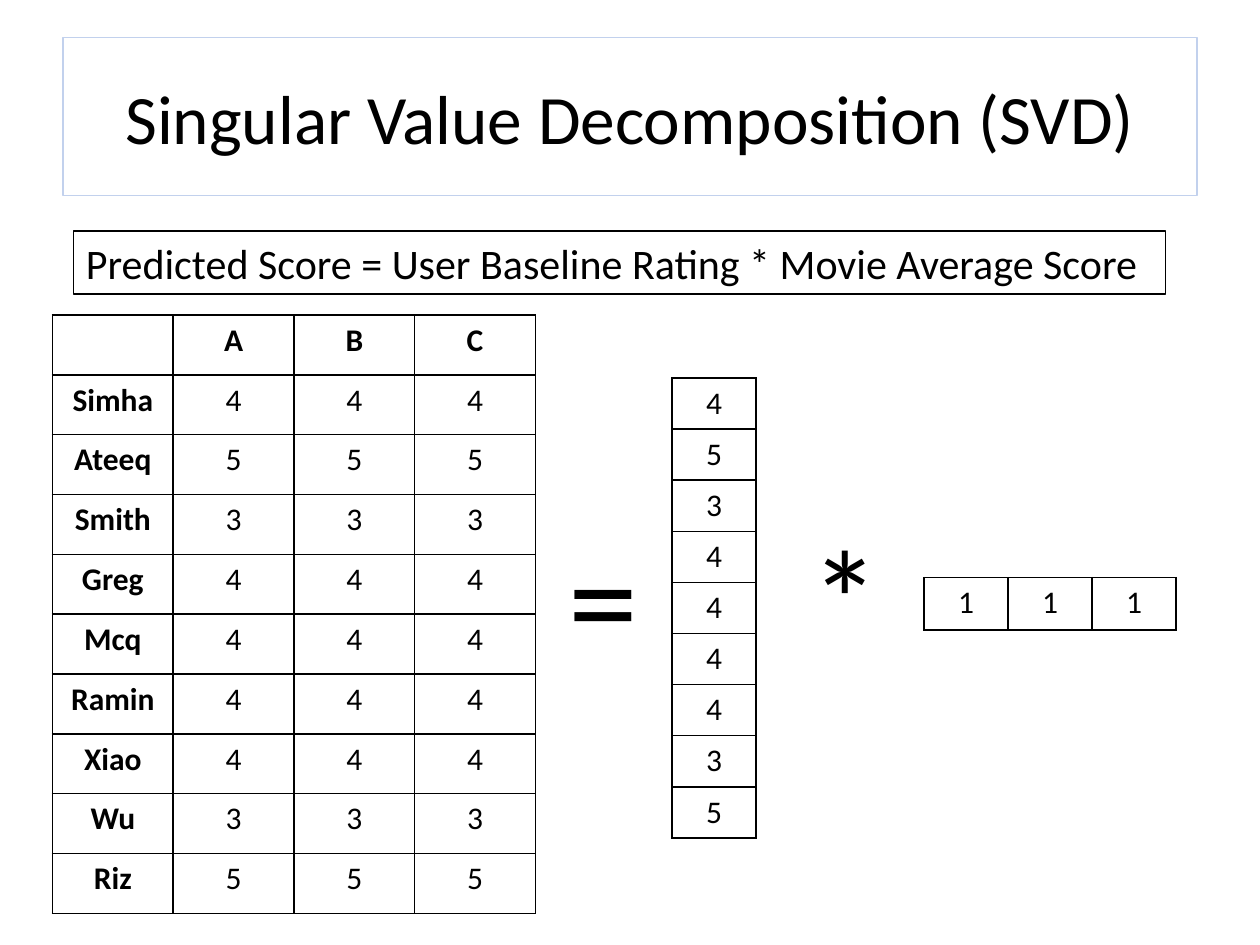
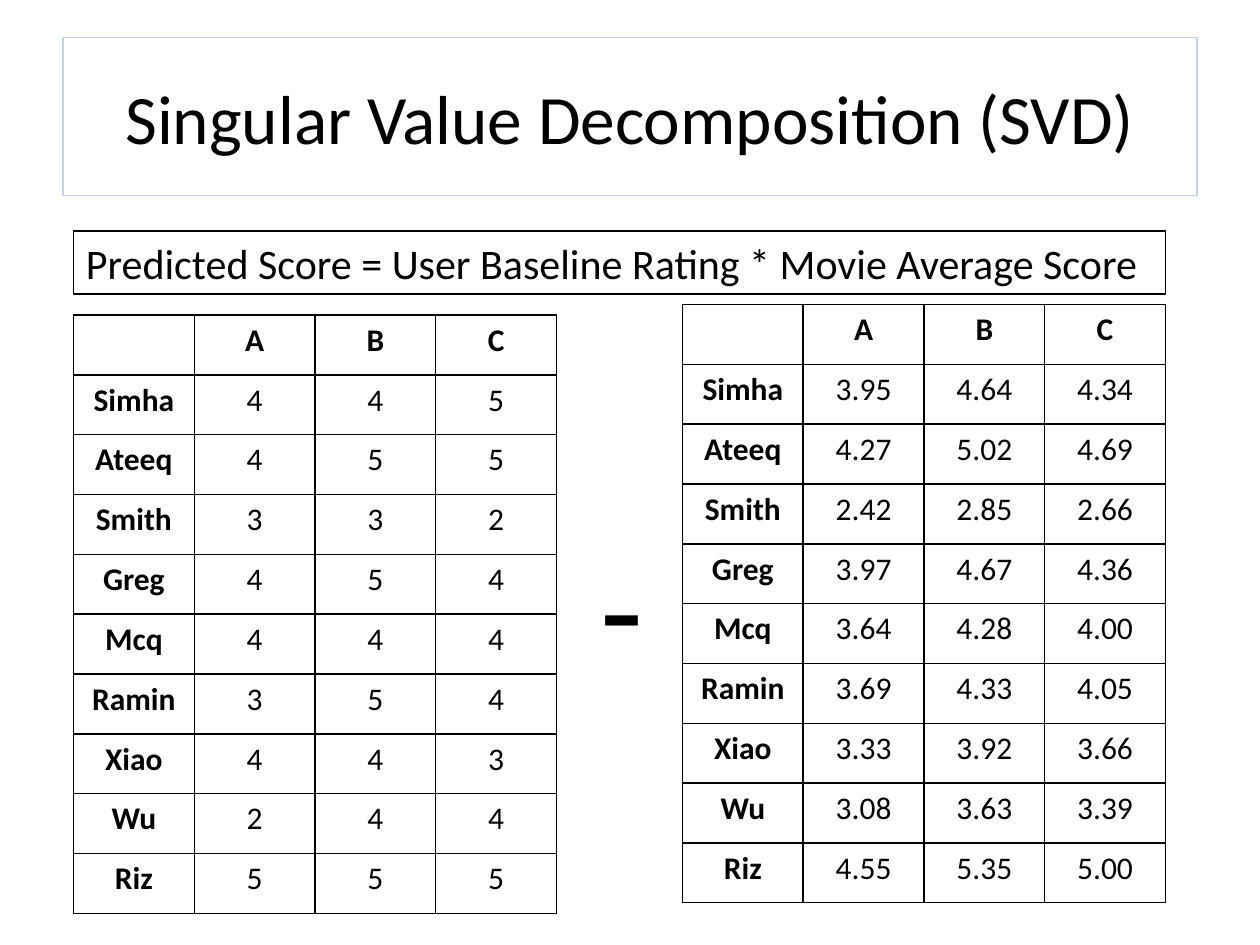
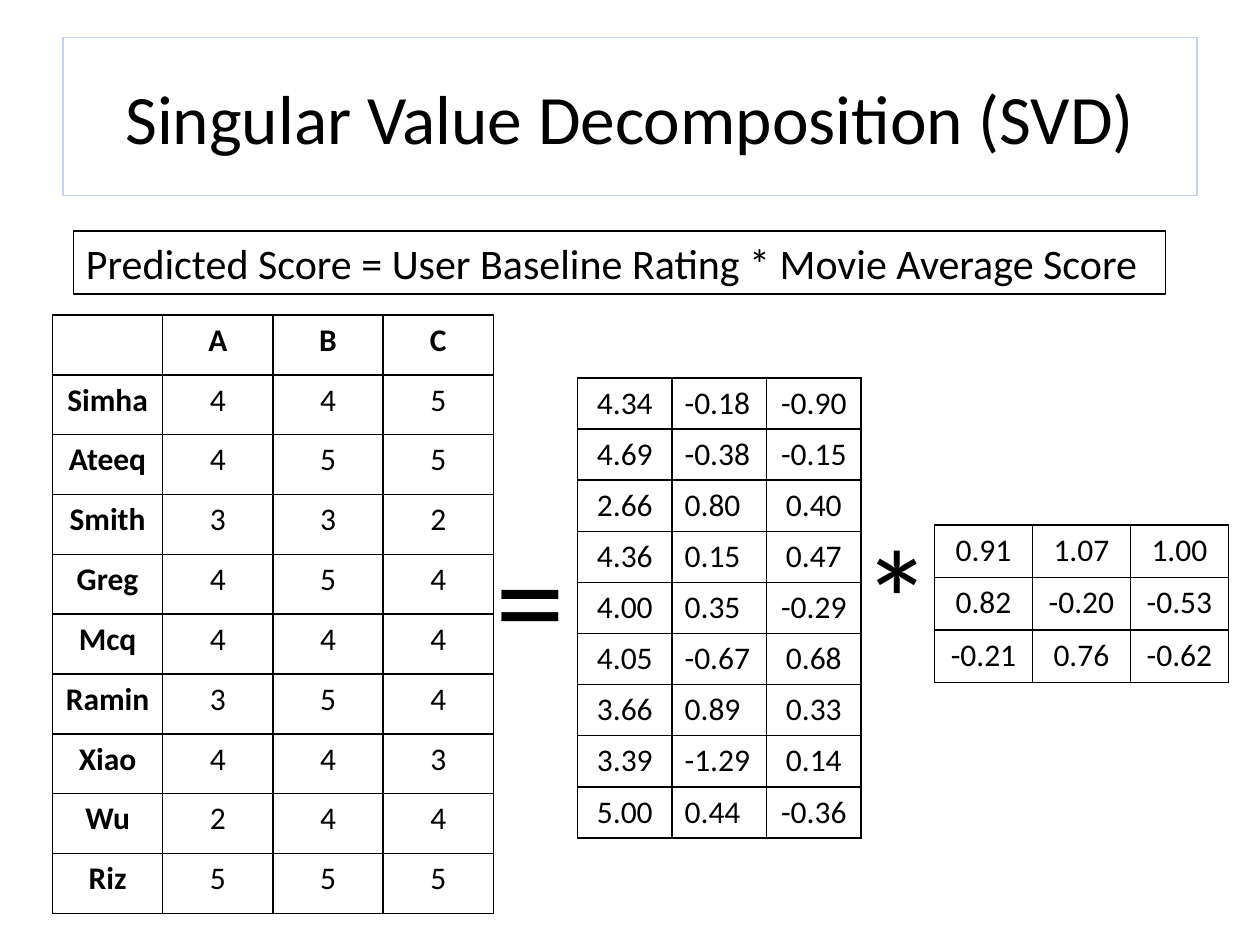
from lxml.etree import SubElement
from pptx import Presentation
from pptx.dml.color import RGBColor
from pptx.enum.shapes import MSO_SHAPE
from pptx.enum.text import MSO_ANCHOR as Anchor, MSO_AUTO_SIZE as AutoSize, PP_ALIGN as Align
from pptx.oxml.ns import qn
from pptx.util import Inches, Pt

BLACK = RGBColor(0x00, 0x00, 0x00)
PALE_BLUE = RGBColor(0xC2, 0xD1, 0xED)
FONT = "Calibri"
TITLE_SIZE, FORMULA_SIZE, TABLE_SIZE, OPERATOR_SIZE = 39.6, 24, 18, 80
TITLE_ONLY = 5
GRID_COLUMNS, GRID_ROWS = 120, 90

TITLE = "Singular Value Decomposition (SVD)"
FORMULA = "Predicted Score = User Baseline Rating * Movie Average Score"
MOVIES = ["A", "B", "C"]
USERS = "Simha Ateeq Smith Greg Mcq Ramin Xiao Wu Riz".split()

BASELINES = [[score] for score in "453444435"]
UNIT_AVERAGES = [["1", "1", "1"]]
UNIFORM_RATINGS = [baseline * len(MOVIES) for baseline in BASELINES]
RATINGS = [list(row) for row in "445 455 332 454 444 354 443 244 555".split()]
PREDICTIONS = [
    ["3.95", "4.64", "4.34"],
    ["4.27", "5.02", "4.69"],
    ["2.42", "2.85", "2.66"],
    ["3.97", "4.67", "4.36"],
    ["3.64", "4.28", "4.00"],
    ["3.69", "4.33", "4.05"],
    ["3.33", "3.92", "3.66"],
    ["3.08", "3.63", "3.39"],
    ["4.55", "5.35", "5.00"],
]
USER_FACTORS = [
    ["4.34", "-0.18", "-0.90"],
    ["4.69", "-0.38", "-0.15"],
    ["2.66", "0.80", "0.40"],
    ["4.36", "0.15", "0.47"],
    ["4.00", "0.35", "-0.29"],
    ["4.05", "-0.67", "0.68"],
    ["3.66", "0.89", "0.33"],
    ["3.39", "-1.29", "0.14"],
    ["5.00", "0.44", "-0.36"],
]
MOVIE_FACTORS = [
    ["0.91", "1.07", "1.00"],
    ["0.82", "-0.20", "-0.53"],
    ["-0.21", "0.76", "-0.62"],
]


class Deck:
    """Holds the style and the current slide; places are grid columns and rows."""

    def __init__(self):
        self.presentation = Presentation()
        self.presentation.slide_width = Inches(10)
        self.presentation.slide_height = Inches(7.5)
        self.column = self.presentation.slide_width / GRID_COLUMNS
        self.row = self.presentation.slide_height / GRID_ROWS
        self.slide = None

    def place(self, left, top, width, height):
        return (round(left * self.column), round(top * self.row),
                round(width * self.column), round(height * self.row))

    def set_text(self, text_frame, text, size, align=Align.LEFT, bold=False):
        text_frame.text = text
        for paragraph in text_frame.paragraphs:
            paragraph.alignment = align
            for run in paragraph.runs:
                run.font.name, run.font.size, run.font.bold = FONT, Pt(size), bold
                run.font.color.rgb = BLACK

    def outline(self, shape, color):
        shape.line.color.rgb = color
        shape.line.width = Pt(0.75)

    def start_slide(self):
        layout = self.presentation.slide_layouts[TITLE_ONLY]
        self.slide = self.presentation.slides.add_slide(layout)
        title = self.slide.shapes.title
        title.left, title.top, title.width, title.height = self.place(6, 3.6, 108, 15)
        self.outline(title, PALE_BLUE)
        self.set_text(title.text_frame, TITLE, TITLE_SIZE, Align.CENTER)
        title.text_frame.vertical_anchor = Anchor.MIDDLE

    def formula(self):
        box = self.slide.shapes.add_shape(MSO_SHAPE.RECTANGLE, *self.place(7, 22, 104, 6))
        box.shadow.inherit = False
        box.fill.background()
        self.outline(box, BLACK)
        self.set_text(box.text_frame, FORMULA, FORMULA_SIZE)
        box.text_frame.vertical_anchor = Anchor.TOP
        box.text_frame.word_wrap = True
        box.text_frame.auto_size = AutoSize.SHAPE_TO_FIT_TEXT

    def operator(self, symbol, left, top=48, width=8):
        box = self.slide.shapes.add_textbox(*self.place(left, top, width, 17.4))
        self.set_text(box.text_frame, symbol, OPERATOR_SIZE)
        box.text_frame.word_wrap = True
        box.text_frame.auto_size = AutoSize.SHAPE_TO_FIT_TEXT

    def border(self, cell):
        properties = cell._tc.get_or_add_tcPr()
        for side in ("lnL", "lnR", "lnT", "lnB"):
            line = SubElement(properties, qn(f"a:{side}"), w=str(Pt(1)))
            fill = SubElement(line, qn("a:solidFill"))
            SubElement(fill, qn("a:srgbClr"), val=str(BLACK))

    def matrix(self, values, left, top, width, height, headed=False, left_column=None):
        """Draw a bordered table; headed makes the first row and column bold."""
        frame = self.slide.shapes.add_table(
            len(values), len(values[0]), *self.place(left, top, width, height))
        table = frame.table
        table.first_row = table.horz_banding = False
        for i, row in enumerate(values):
            for j, value in enumerate(row):
                cell = table.cell(i, j)
                align = Align.LEFT if j == left_column else Align.CENTER
                bold = headed and (i == 0 or j == 0)
                self.set_text(cell.text_frame, value, TABLE_SIZE, align, bold)
                self.border(cell)
                cell.fill.background()

    def score_table(self, scores, left, top=30, width=46):
        users = [[user] + row for user, row in zip(USERS, scores)]
        self.matrix([[""] + MOVIES] + users, left, top, width, 57, headed=True)


def uniform_slide(deck):
    deck.start_slide()
    deck.score_table(UNIFORM_RATINGS, 5)
    deck.formula()
    deck.matrix(BASELINES, 64, 36, 8, 43.8)
    deck.matrix(UNIT_AVERAGES, 88, 55, 24, 5)
    deck.operator("=", 53, width=9)
    deck.operator("*", 76)


def error_slide(deck):
    deck.start_slide()
    deck.score_table(PREDICTIONS, 65, top=29)
    deck.formula()
    deck.operator("-", 56, top=49)
    deck.score_table(RATINGS, 7)


def factor_slide(deck):
    deck.start_slide()
    deck.score_table(RATINGS, 5, width=42)
    deck.formula()
    deck.matrix(USER_FACTORS, 55, 36, 27, 43.8, left_column=1)
    deck.matrix(MOVIE_FACTORS, 89, 50, 28, 15)
    deck.operator("=", 46, width=9)
    deck.operator("*", 81)


def main():
    deck = Deck()
    uniform_slide(deck)
    error_slide(deck)
    factor_slide(deck)
    deck.presentation.save("out.pptx")


if __name__ == "__main__":
    main()
